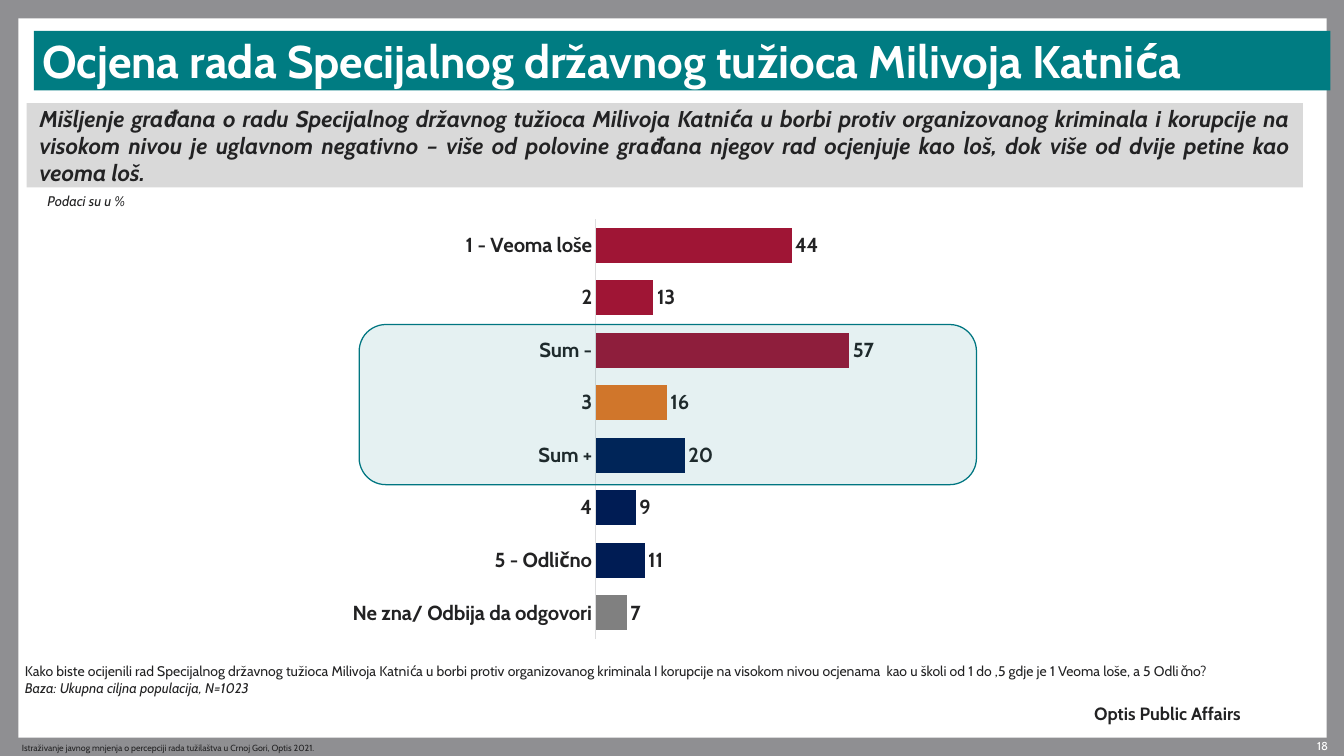
"""Build the survey slide on the rating of the special state prosecutor."""
from dataclasses import dataclass
from typing import Optional

from lxml.etree import SubElement
from pptx import Presentation
from pptx.chart.data import CategoryChartData
from pptx.dml.color import RGBColor
from pptx.enum.chart import XL_CHART_TYPE as ChartType
from pptx.enum.chart import XL_LABEL_POSITION as LabelPosition
from pptx.enum.chart import XL_TICK_MARK as TickMark
from pptx.enum.shapes import MSO_SHAPE as ShapeKind
from pptx.enum.text import MSO_ANCHOR as Anchor
from pptx.enum.text import MSO_AUTO_SIZE as AutoSize
from pptx.enum.text import PP_ALIGN as Align
from pptx.oxml.ns import qn
from pptx.util import Cm, Pt

FONT = "Cabin"
BACKDROP = RGBColor(0x8F, 0x8F, 0x92)
WHITE = RGBColor(0xFF, 0xFF, 0xFF)
INK = RGBColor(0x22, 0x22, 0x23)
TEAL = RGBColor(0x00, 0x7C, 0x82)
FRAME_TEAL = RGBColor(0x00, 0x76, 0x81)
PALE = RGBColor(0xD9, 0xD9, 0xD9)
AXIS = RGBColor(0xDD, 0xDD, 0xDE)
RED = RGBColor(0x9F, 0x15, 0x35)
ORANGE = RGBColor(0xE8, 0x77, 0x22)
NAVY = RGBColor(0x00, 0x1C, 0x54)
GREY = RGBColor(0x80, 0x80, 0x80)


@dataclass(frozen=True)
class Area:
    left: float
    top: float
    width: float
    height: float

    def lengths(self) -> tuple[Cm, Cm, Cm, Cm]:
        return Cm(self.left), Cm(self.top), Cm(self.width), Cm(self.height)


@dataclass(frozen=True)
class Span:
    text: str
    size: float
    color: RGBColor = INK
    bold: bool = False
    italic: bool = False


@dataclass(frozen=True)
class Label:
    area: Area
    spans: tuple[Span, ...]
    align: Align = Align.LEFT
    anchor: Anchor = Anchor.TOP
    inset: tuple[float, float] = (0, 0)
    fill: Optional[RGBColor] = None


@dataclass(frozen=True)
class Rating:
    name: str
    percent: int
    color: RGBColor


TITLE = Label(
    Area(0.94, 0.86, 36.02, 1.65),
    (Span("Ocjena rada Specijalnog državnog tužioca Milivoja Katnića", 36, WHITE, bold=True),),
    anchor=Anchor.MIDDLE, inset=(0.23, 0.05), fill=TEAL)

LABELS = (
    Label(Area(35.71, 20.55, 1.19, 0.43), (Span("18", 9, WHITE),), align=Align.RIGHT),
    Label(Area(30.4, 19.53, 5.31, 0.61), (Span("Optis Public Affairs", 14, bold=True),)),
    Label(Area(0.61, 20.55, 12.34, 0.46),
          (Span("Istraživanje javnog mnjenja o percepciji rada tužilaštva u Crnoj Gori, "
                "Optis 2021.", 7),), anchor=Anchor.MIDDLE),
    Label(Area(1.07, 5.21, 3.4, 0.74), (Span("Podaci su u %", 11, italic=True),),
          inset=(0.25, 0.13)),
    Label(Area(0.74, 2.87, 35.46, 2.34),
          (Span("Mišljenje građana o radu Specijalnog državnog tužioca Milivoja Katnića u borbi "
                "protiv organizovanog kriminala i korupcije na visokom nivou je uglavnom "
                "negativno – više od polovine građana njegov rad ocjenjuje kao loš, dok više od "
                "dvije petine kao veoma loš.", 18, bold=True, italic=True),),
          align=Align.JUSTIFY, anchor=Anchor.MIDDLE, inset=(0.36, 0), fill=PALE),
    Label(Area(0.69, 17.91, 35.59, 1.96),
          (Span("Kako biste ocijenili rad Specijalnog državnog tužioca Milivoja Katnića u borbi "
                "protiv organizovanog kriminala I korupcije na visokom nivou ocjenama  kao u "
                "školi od 1 do ,5 gdje je 1 Veoma loše, a 5 Odlično?", 11),
           Span("Baza: Ukupna ciljna populacija, N=1023", 11, italic=True)),
          anchor=Anchor.MIDDLE),
)

RATINGS = (
    Rating("1 - Veoma loše", 44, RED),
    Rating("2", 13, RED),
    Rating("Sum -", 57, RED),
    Rating("3", 16, ORANGE),
    Rating("Sum +", 20, NAVY),
    Rating("4", 9, NAVY),
    Rating("5 - Odlično", 11, NAVY),
    Rating("Ne zna/ Odbija da odgovori", 7, GREY),
)

PANEL = Area(0.51, 0.51, 36.35, 19.99)
CHART = Area(8.51, 5.77, 16.31, 12.19)
HIGHLIGHT = Area(9.98, 9.02, 17.15, 4.45)
PLOT = {"x": 0.493, "y": 0.026, "w": 0.455, "h": 0.958}


def style_font(font, size: float, color: RGBColor, bold: bool, italic: bool = False) -> None:
    font.name = FONT
    font.size = Pt(size)
    font.bold = bold
    font.italic = italic
    font.color.rgb = color


def write_label(box, label: Label) -> None:
    box.left, box.top, box.width, box.height = label.area.lengths()
    if label.fill is not None:
        box.fill.solid()
        box.fill.fore_color.rgb = label.fill
    frame = box.text_frame
    frame.word_wrap = True
    frame.auto_size = AutoSize.NONE
    frame.vertical_anchor = label.anchor
    frame.margin_left = frame.margin_right = Cm(label.inset[0])
    frame.margin_top = frame.margin_bottom = Cm(label.inset[1])
    for index, span in enumerate(label.spans):
        para = frame.add_paragraph() if index else frame.paragraphs[0]
        para.alignment = label.align
        run = para.add_run()
        run.text = span.text
        style_font(run.font, span.size, span.color, span.bold, span.italic)


def add_block(page, kind: ShapeKind, area: Area, color: RGBColor):
    block = page.shapes.add_shape(kind, *area.lengths())
    block.shadow.inherit = False
    block.fill.solid()
    block.fill.fore_color.rgb = color
    block.line.fill.background()
    return block


def fix_plot_area(chart) -> None:
    plot_area = chart.plots[0]._element.getparent()
    layout = plot_area.find(qn("c:layout"))
    if layout is None:
        layout = SubElement(plot_area, qn("c:layout"))
        plot_area.insert(0, layout)
    manual = SubElement(layout, qn("c:manualLayout"))
    settings = {"layoutTarget": "inner", "xMode": "edge", "yMode": "edge", **PLOT}
    for name, value in settings.items():
        SubElement(manual, qn(f"c:{name}")).set("val", str(value))


def add_rating_chart(page) -> None:
    data = CategoryChartData()
    data.categories = [rating.name for rating in RATINGS]
    data.add_series("Series 1", [rating.percent for rating in RATINGS])
    chart = page.shapes.add_chart(ChartType.BAR_CLUSTERED, *CHART.lengths(), data).chart
    chart.has_legend = False
    chart.has_title = False
    style_font(chart.font, 16, INK, True)

    category_axis = chart.category_axis
    category_axis.reverse_order = True
    category_axis.major_tick_mark = TickMark.NONE
    category_axis.format.line.color.rgb = AXIS
    category_axis.format.line.width = Pt(0.75)
    style_font(category_axis.tick_labels.font, 16, INK, True)
    value_axis = chart.value_axis
    value_axis.minimum_scale, value_axis.maximum_scale = 0, 60
    value_axis.has_major_gridlines = False
    value_axis.visible = False

    plot = chart.plots[0]
    plot.gap_width = 50
    plot.vary_by_categories = False
    series = plot.series[0]
    series.format.fill.solid()
    series.format.fill.fore_color.rgb = RED
    for index, rating in enumerate(RATINGS):
        if rating.color != RED:
            fill = series.points[index].format.fill
            fill.solid()
            fill.fore_color.rgb = rating.color
    labels = series.data_labels
    labels.show_value = True
    labels.position = LabelPosition.OUTSIDE_END
    labels.number_format = "#,##0;\\-#,##0"
    labels.number_format_is_linked = False
    style_font(labels.font, 16, INK, True)
    fix_plot_area(chart)


def main() -> None:
    deck = Presentation()
    deck.slide_width, deck.slide_height = Cm(37.34), Cm(21.01)
    page = deck.slides.add_slide(deck.slide_layouts[5])
    page.background.fill.solid()
    page.background.fill.fore_color.rgb = BACKDROP
    title = page.shapes.title
    panel = add_block(page, ShapeKind.RECTANGLE, PANEL, WHITE)
    title._element.addprevious(panel._element)
    write_label(title, TITLE)
    for label in LABELS:
        write_label(page.shapes.add_textbox(*label.area.lengths()), label)
    add_rating_chart(page)
    highlight = add_block(page, ShapeKind.ROUNDED_RECTANGLE, HIGHLIGHT, FRAME_TEAL)
    color = highlight.fill._xPr.find(qn("a:solidFill"))[0]
    SubElement(color, qn("a:alpha")).set("val", "10000")
    highlight.line.color.rgb = FRAME_TEAL
    highlight.line.width = Pt(1)
    deck.save("out.pptx")


if __name__ == "__main__":
    main()
